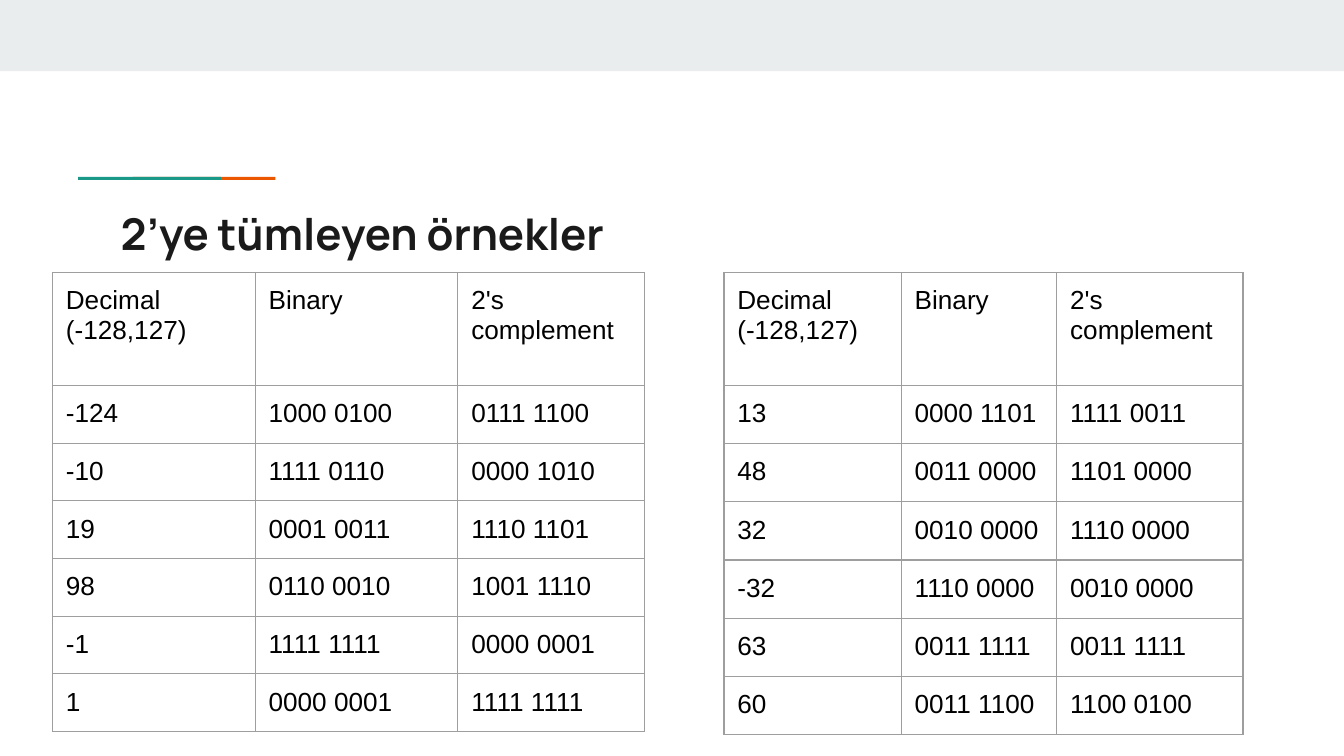
from lxml.etree import SubElement
from pptx import Presentation
from pptx.dml.color import RGBColor
from pptx.enum.shapes import MSO_SHAPE as Shape
from pptx.enum.text import MSO_ANCHOR as Anchor, MSO_AUTO_SIZE as AutoSize, PP_ALIGN as Align
from pptx.oxml.ns import qn
from pptx.util import Pt

BAND = RGBColor(0xE9, 0xED, 0xEE)
TEAL = RGBColor(0x1A, 0x99, 0x88)
ORANGE = RGBColor(0xEB, 0x56, 0x00)
INK = RGBColor(0x1A, 0x1A, 0x1A)
BLACK = RGBColor(0, 0, 0)
GRID = RGBColor(0x9E, 0x9E, 0x9E)
INSET = Pt(7.2)
HEADER_HEIGHT = Pt(60.5)
HEADINGS = ("Decimal\n(-128,127)", "Binary", "2's complement")
LEFT_ROWS = [
    ("-124", "1000 0100", "0111 1100"),
    ("-10", "1111 0110", "0000 1010"),
    ("19", "0001 0011", "1110 1101"),
    ("98", "0110 0010", "1001 1110"),
    ("-1", "1111 1111", "0000 0001"),
    ("1", "0000 0001", "1111 1111"),
]
RIGHT_ROWS = [
    ("13", "0000 1101", "1111 0011"),
    ("48", "0011 0000", "1101 0000"),
    ("32", "0010 0000", "1110 0000"),
    ("-32", "1110 0000", "0010 0000"),
    ("63", "0011 1111", "0011 1111"),
    ("60", "0011 1100", "1100 0100"),
]


def add_bar(page, box, color):
    """Place a plain filled rectangle in the box."""
    bar = page.shapes.add_shape(Shape.RECTANGLE, *box)
    bar.shadow.inherit = False
    bar.fill.solid()
    bar.fill.fore_color.rgb = color
    bar.line.fill.background()


def add_accent(page, left, top, width, height):
    """Place the two-colour accent rule, its bars overlapping inside the box."""
    length = Pt(76.5)
    add_bar(page, (left + width - length, top, length, height), ORANGE)
    add_bar(page, (left, top, length, height), TEAL)


def place_title(page, text, left, top, width, height):
    """Move and format the title placeholder."""
    title = page.shapes.title
    title.left, title.top, title.width, title.height = left, top, width, height
    frame = title.text_frame
    frame.text = text
    frame.auto_size = AutoSize.NONE
    frame.word_wrap = True
    frame.vertical_anchor = Anchor.TOP
    frame.margin_left = frame.margin_right = INSET
    frame.margin_top = frame.margin_bottom = INSET
    para = frame.paragraphs[0]
    para.alignment = Align.LEFT
    para.line_spacing = 1.0
    para.space_before = Pt(0)
    para.font.name = "Manrope"
    para.font.size = Pt(23.4)
    para.font.bold = True
    para.font.color.rgb = INK


def format_cell(cell, text):
    """Fill a cell with text and draw its four borders."""
    cell.text = text
    cell.margin_left = cell.margin_right = INSET
    cell.margin_top = cell.margin_bottom = INSET
    cell.vertical_anchor = Anchor.TOP
    for para in cell.text_frame.paragraphs:
        para.font.name = "Arial"
        para.font.size = Pt(14)
        para.font.color.rgb = BLACK
    properties = cell._tc.get_or_add_tcPr()
    for side in ("a:lnL", "a:lnR", "a:lnT", "a:lnB"):
        line = SubElement(properties, qn(side), w=str(Pt(0.75)))
        fill = SubElement(line, qn("a:solidFill"))
        SubElement(fill, qn("a:srgbClr"), val=str(GRID))
    cell.fill.background()


def add_number_table(page, rows, left, top, widths, row_height):
    """Place a table of numbers under the shared headings."""
    lines = [HEADINGS, *rows]
    height = HEADER_HEIGHT + row_height * len(rows)
    frame = page.shapes.add_table(len(lines), len(widths), left, top, sum(widths), height)
    table = frame.table
    table.first_row = table.horz_banding = False
    for column, width in zip(table.columns, widths):
        column.width = width
    for index, (row, texts) in enumerate(zip(table.rows, lines)):
        row.height = row_height if index else HEADER_HEIGHT
        for cell, text in zip(row.cells, texts):
            format_cell(cell, text)


def main():
    """Build the slide and save it."""
    deck = Presentation()
    deck.slide_width, deck.slide_height = Pt(720), Pt(405)
    page = deck.slides.add_slide(deck.slide_layouts[5])
    add_bar(page, (0, 0, deck.slide_width, Pt(38.2)), BAND)
    add_accent(page, Pt(41.8), Pt(94.8), Pt(105.8), Pt(1.6))
    place_title(page, "2’ye tümleyen örnekler", Pt(57.4), Pt(103.7), Pt(605.5), Pt(42.5))
    top = Pt(146)
    add_number_table(page, LEFT_ROWS, Pt(28.1), top, (Pt(108.6), Pt(108.6), Pt(100.2)), Pt(30.9))
    add_number_table(page, RIGHT_ROWS, Pt(387.8), top, (Pt(95), Pt(83.3), Pt(99.8)), Pt(31.2))
    deck.save("out.pptx")


if __name__ == "__main__":
    main()
